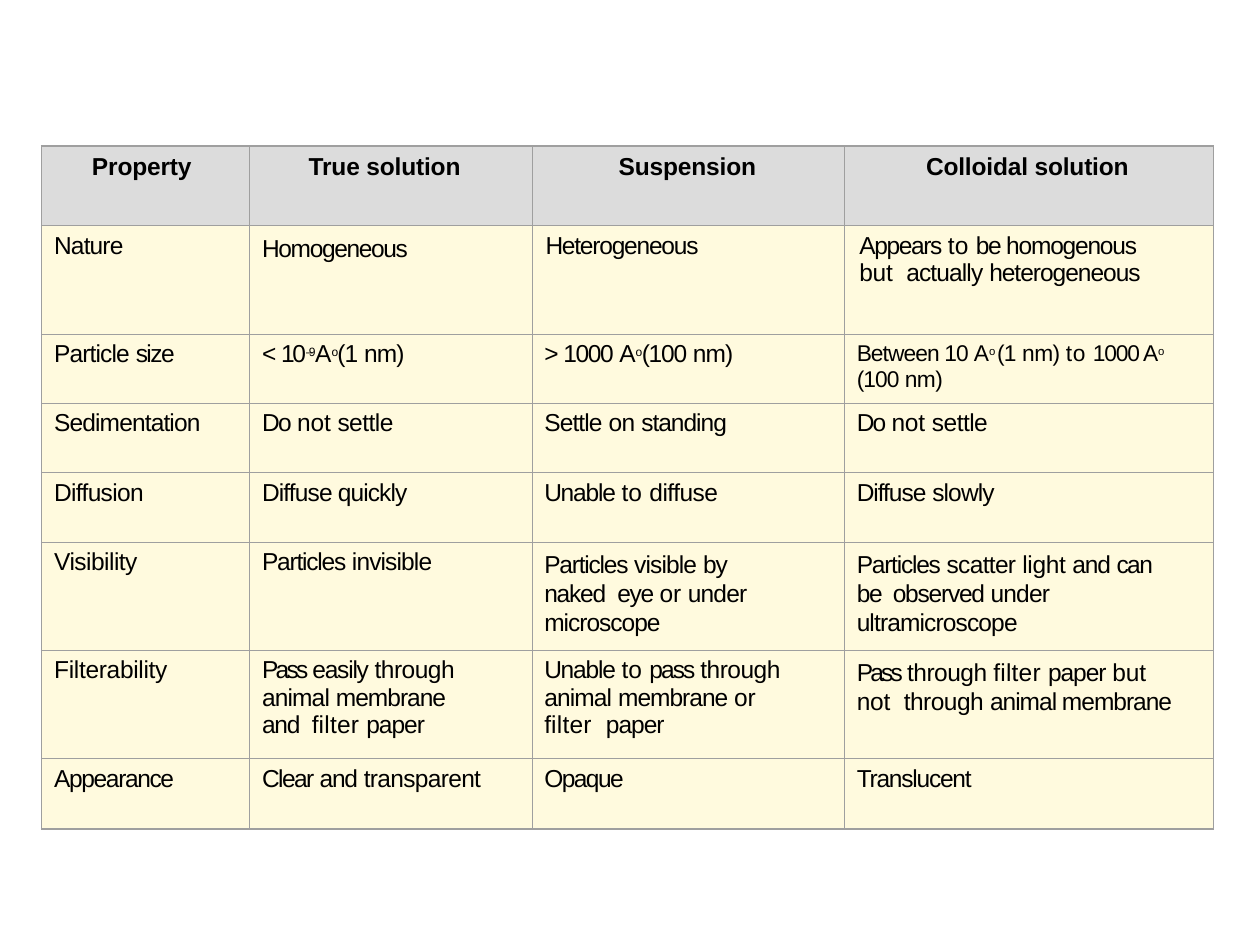
from itertools import product

from lxml.etree import SubElement
from pptx import Presentation
from pptx.dml.color import RGBColor as RGB
from pptx.oxml.ns import qn
from pptx.util import Inches, Pt

COLORS = {"head": "DCDCDC", "body": "FFFADE", "rule": "9F9F9F", "text": "000000"}
RULES = {"inner": 0.25, "outer": 1}
COLUMNS = [1.65, 2.24, 2.48, 2.93]
ROWS = [0.63, 0.86, 0.55, 0.55, 0.55, 0.86, 0.86, 0.56]
LEFT, TOP = 0.33, 1.16
SUPER = "super"
NEW_LINE = ("\n", 0)

HEADINGS = ["Property", "True solution", "Suspension", "Colloidal solution"]
HEADING_INDENTS = [0.4, 0.47, 0.69, 0.65]

PROPERTIES = [
    [
        [("Nature", -0.5)],
        [("Homogeneous", -0.8)],
        [("Heterogeneous", -0.7)],
        [("Appears ", -0.8), ("to ", 0.1), ("be homogenous ", -0.7), ("but  ", -0.1),
         ("actually ", -0.5), ("heterogeneous", -0.6)],
    ],
    [
        [("Particle ", -0.5), ("size", -0.9)],
        [("< ", -1.2), ("10", -1.4), ("–9 ", -2.2, SUPER), ("A", -1.6),
         ("o ", -2.5, SUPER), ("(1", -0.6), (" nm)", -0.5)],
        [("> ", -1.2), ("1000 ", -0.8), ("A", -1.6), ("o ", -2.3, SUPER),
         ("(100 ", -0.7), ("nm)", -0.5)],
        [("Between 10 ", -0.5), ("A", -0.6), ("o ", -0.8, SUPER), ("(1 ", -0.4),
         ("nm) ", -0.3), ("to ", 0.3), ("1000 A", -0.6), ("o", -0.8, SUPER),
         NEW_LINE, ("(100 ", -0.5), ("nm)", -0.3)],
    ],
    [
        [("Sedimentation", -0.5)],
        [("Do ", -0.9), ("not ", -0.1), ("settle", -0.3)],
        [("Settle ", -0.5), ("on ", -0.4), ("standing", -0.6)],
        [("Do ", -1), ("not ", -0.1), ("settle", -0.3)],
    ],
    [
        [("Diffusion", -0.4)],
        [("Diffuse quickly", -0.5)],
        [("Unable ", -0.7), ("to ", 0.1), ("diffuse", -0.3)],
        [("Diffuse ", -0.6), ("slowly", -0.5)],
    ],
    [
        [("Visibility", -0.3)],
        [("Particles ", -0.7), ("invisible", -0.5)],
        [("Particles ", -0.7), ("visible ", -0.5), ("by ", -0.6), ("naked  ", -0.7),
         ("eye ", -0.8), ("or ", -0.1), ("under ", -0.5), ("microscope", -0.6)],
        [("Particles ", -0.7), ("scatter ", -0.4), ("light ", -0.2), ("and ", -0.7),
         ("can ", -0.9), ("be  observed ", -0.7), ("under ultramicroscope", -0.5)],
    ],
    [
        [("Filterability", -0.2)],
        [("Pass ", -1.6), ("easily ", -0.7), ("through  ", -0.3), ("animal ", -0.5),
         ("membrane ", -0.6), ("and  ", -0.7), ("filter ", 0.1), ("paper", -0.6)],
        [("Unable ", -0.7), ("to ", 0.1), ("pass ", -1.1), ("through  ", -0.3),
         ("animal ", -0.5), ("membrane ", -0.6), ("or ", -0.1), ("filter  ", 0.1),
         ("paper", -0.6)],
        [("Pass ", -1.6), ("through ", -0.3), ("filter ", 0.1), ("paper ", -0.6),
         ("but not  ", -0.1), ("through ", -0.3), ("animal membrane", -0.6)],
    ],
    [
        [("Appearance", -0.8)],
        [("Clear ", -0.9), ("and ", -0.7), ("transparent", -0.4)],
        [("Opaque", -0.9)],
        [("Translucent", -0.7)],
    ],
]

BODY = {"bold": False, "indent": 0.1, "top": 3.7, "right": 0, "size": 14, "leading": None}
HEAD = BODY | {"bold": True, "top": 4.3}
SPECIAL = {
    (1, 1): {"top": 5.8},
    (1, 2): {"indent": 0.11},
    (1, 3): {"indent": 0.12, "right": 0.45},
    (2, 3): {"top": 4, "size": 13},
    (5, 2): {"top": 4.3, "right": 0.6, "leading": 16.7},
    (5, 3): {"top": 4.3, "right": 0.4, "leading": 16.7},
    (6, 1): {"right": 0.5},
    (6, 2): {"right": 0.4},
    (6, 3): {"top": 4.4, "right": 0.27, "leading": 16.7},
}


def color(key):
    return RGB.from_string(COLORS[key])


def draw_borders(cell, row, column):
    outer = {"L": column == 0, "R": column == len(COLUMNS) - 1,
             "T": row == 0, "B": row == len(ROWS) - 1}
    for side, is_outer in outer.items():
        weight = RULES["outer" if is_outer else "inner"]
        line = SubElement(cell._tc.get_or_add_tcPr(), qn(f"a:ln{side}"), w=str(Pt(weight)))
        SubElement(SubElement(line, qn("a:solidFill")), qn("a:srgbClr"), val=COLORS["rule"])


def format_paragraph(paragraph, look, space):
    paragraph.space_before = Pt(space)
    if look["leading"]:
        paragraph.line_spacing = Pt(look["leading"])
    indents = paragraph._p.get_or_add_pPr()
    indents.set("marL", str(Inches(look["indent"])))
    indents.set("indent", "0")
    font = paragraph.font
    font.name, font.bold, font.size = "Arial", look["bold"], Pt(look["size"])
    font.color.rgb = color("text")


def write(cell, runs, look):
    cell.margin_left = cell.margin_bottom = 0
    cell.margin_top, cell.margin_right = Pt(look["top"]), Inches(look["right"])
    paragraph = cell.text_frame.paragraphs[0]
    format_paragraph(paragraph, look, look["top"])
    for text, tracking, *script in runs:
        if text == "\n":
            paragraph = cell.text_frame.add_paragraph()
            format_paragraph(paragraph, look, 0.3)
            continue
        run = paragraph.add_run()
        run.text = text
        marks = run._r.get_or_add_rPr()
        marks.set("spc", str(round(tracking * 100)))
        if SUPER in script:
            run.font.size = Pt(round(look["size"] * 0.86, 1))
            marks.set("baseline", "28000")


def main():
    deck = Presentation()
    deck.slide_width, deck.slide_height = Inches(10), Inches(7.5)
    slide = deck.slides.add_slide(deck.slide_layouts[6])
    comparison = slide.shapes.add_table(
        len(ROWS), len(COLUMNS), Inches(LEFT), Inches(TOP),
        Inches(sum(COLUMNS)), Inches(sum(ROWS))).table
    comparison.first_row = comparison.horz_banding = False
    for column, width in zip(comparison.columns, COLUMNS):
        column.width = Inches(width)
    for row, height in zip(comparison.rows, ROWS):
        row.height = Inches(height)

    content = [[[(heading, -0.1)] for heading in HEADINGS]] + PROPERTIES
    for row, column in product(range(len(ROWS)), range(len(COLUMNS))):
        cell = comparison.cell(row, column)
        if row == 0:
            look = HEAD | {"indent": HEADING_INDENTS[column]}
        else:
            look = BODY | SPECIAL.get((row, column), {})
        draw_borders(cell, row, column)
        cell.fill.solid()
        cell.fill.fore_color.rgb = color("body" if row else "head")
        write(cell, content[row][column], look)
    deck.save("out.pptx")


if __name__ == "__main__":
    main()
